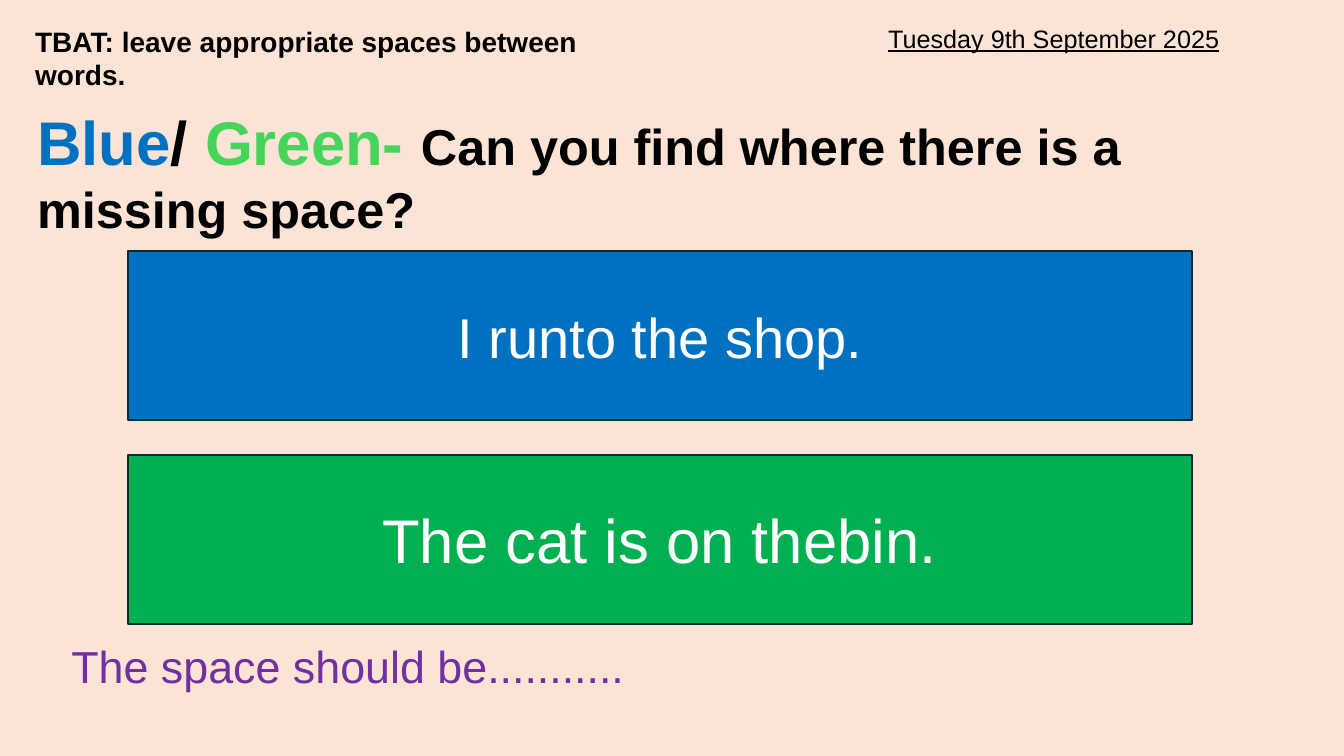
from pptx import Presentation
from pptx import util as u
from pptx.dml.color import RGBColor
from pptx.enum import shapes, text

COLOURS = {
    "background": "FBE3D6",
    "black": "000000",
    "white": "FFFFFF",
    "blue": "0070C0",
    "light green": "47D45A",
    "green": "00B050",
    "purple": "7030A0",
    "outline": "092A39",
}


def colour(name):
    return RGBColor.from_string(COLOURS[name])


def write(para, words, size, shade, bold=False, underline=False):
    """Append one formatted run to the paragraph."""
    span = para.add_run()
    span.text = words
    span.font.name = "Arial"
    span.font.size = u.Pt(size)
    span.font.color.rgb = colour(shade)
    span.font.bold = bold
    span.font.underline = underline


deck = Presentation()
deck.slide_width, deck.slide_height = u.Inches(13.33), u.Inches(7.5)
page = deck.slides.add_slide(deck.slide_layouts[6])
page.background.fill.solid()
page.background.fill.fore_color.rgb = colour("background")

# Text boxes: left, top, width, height, then runs of words, size, colour, bold, underline
text_boxes = [
    (8.71, 0.18, 4.14, 0.4, [("Tuesday 9th September 2025", 18, "black", False, True)]),
    (0.25, 0.19, 5.92, 0.44,
     [("TBAT: leave appropriate spaces between words.", 20, "black", True)]),
    (0.27, 0.98, 12.09, 1.45, [
        ("Blue", 44, "blue", True),
        ("/ ", 44, "black", True),
        ("Green- ", 44, "light green", True),
        ("Can you find where there is a missing space?", 36, "black", True),
    ]),
    (0.61, 6.29, 10.02, 0.64, [("The space should be...........", 32, "purple")]),
]
for *place, runs in text_boxes:
    box = page.shapes.add_textbox(*map(u.Inches, place))
    box.text_frame.word_wrap = True
    for run in runs:
        write(box.text_frame.paragraphs[0], *run)

# Sentence cards, stacked at an equal step
card_left, card_top, card_width, card_height, card_step = 1.27, 2.49, 10.55, 1.68, 2.02
sentences = [("I runto the shop.", 40, "blue"), ("The cat is on thebin.", 44, "green")]
for row, (sentence, size, shade) in enumerate(sentences):
    place = card_left, card_top + row * card_step, card_width, card_height
    card = page.shapes.add_shape(shapes.MSO_SHAPE.RECTANGLE, *map(u.Inches, place))
    card.shadow.inherit = False
    card.fill.solid()
    card.fill.fore_color.rgb = colour(shade)
    card.line.color.rgb = colour("outline")
    card.line.width = u.Pt(1.5)
    card.text_frame.word_wrap = True
    card.text_frame.vertical_anchor = text.MSO_ANCHOR.MIDDLE
    para = card.text_frame.paragraphs[0]
    para.alignment = text.PP_ALIGN.CENTER
    write(para, sentence, size, "white")

deck.save("out.pptx")
